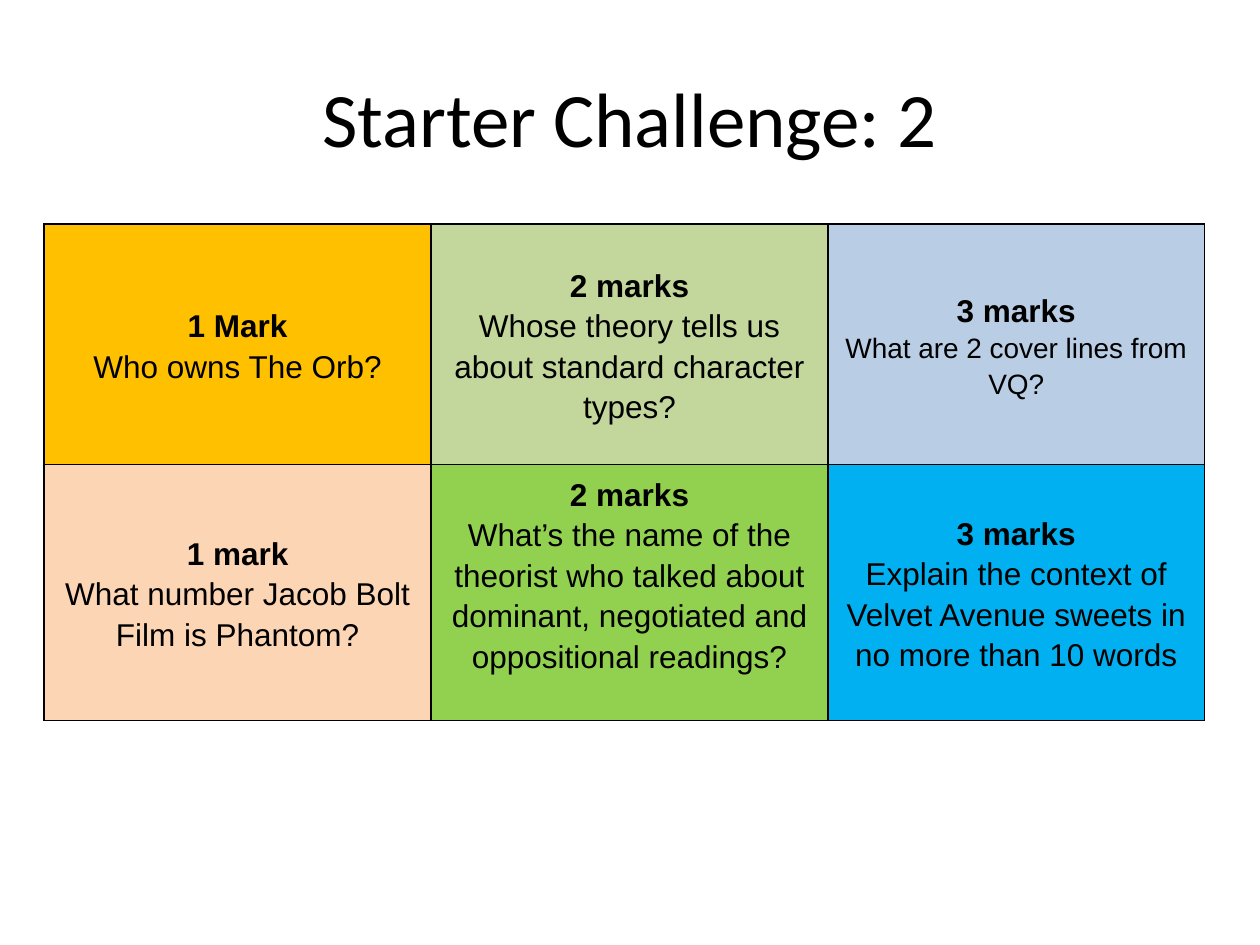
from lxml import etree
from pptx import Presentation
from pptx import util as u
from pptx.dml.color import RGBColor
from pptx.enum import text
from pptx.oxml import ns

BLACK = RGBColor(0x00, 0x00, 0x00)
AMBER = RGBColor(0xFF, 0xC0, 0x00)
SAGE = RGBColor(0xC3, 0xD6, 0x9B)
MIST = RGBColor(0xB9, 0xCD, 0xE5)
PEACH = RGBColor(0xFC, 0xD5, 0xB5)
GREEN = RGBColor(0x92, 0xD0, 0x50)
BLUE = RGBColor(0x00, 0xB0, 0xF0)

WIDTHS = [7.8, 8, 7.59]
HEIGHTS = [4.84, 5.16]
TASKS = [
    [
        ("1 Mark", "Who owns The Orb?", AMBER, {}),
        ("2 marks", "Whose theory tells us about standard character types?", SAGE, {}),
        ("3 marks", "What are 2 cover lines from VQ?", MIST, {"size": 16}),
    ],
    [
        ("1 mark", "What number Jacob Bolt Film is Phantom?", PEACH, {}),
        ("2 marks", "What’s the name of the theorist who talked about dominant, "
         "negotiated and oppositional readings?", GREEN, {"foot": 0.75}),
        ("3 marks", "Explain the context of Velvet Avenue sweets in no more than 10 words",
         BLUE, {}),
    ],
]


def assign(item, values):
    """Set each named attribute on an item."""
    for name, value in values.items():
        setattr(item, name, value)


def write(para, words, size, face, bold=False, space=1.0):
    """Fill a paragraph with one centred run."""
    assign(para, {"alignment": text.PP_ALIGN.CENTER, "line_spacing": space})
    run = para.add_run()
    run.text = words
    assign(run.font, {"name": face, "size": u.Pt(size), "bold": bold})
    run.font.color.rgb = BLACK


def border(cell):
    """Draw a thin black line on all four sides of a cell."""
    props = cell._tc.get_or_add_tcPr()
    for side in ("lnL", "lnR", "lnT", "lnB"):
        line = etree.SubElement(props, ns.qn(f"a:{side}"), w=str(u.Pt(1)))
        fill = etree.SubElement(line, ns.qn("a:solidFill"))
        etree.SubElement(fill, ns.qn("a:srgbClr"), val=str(BLACK))


def title(slide, left, top, width, height):
    """Place the heading in its box."""
    box = slide.shapes.add_textbox(u.Cm(left), u.Cm(top), u.Cm(width), u.Cm(height))
    frame = box.text_frame
    assign(frame, {"word_wrap": True, "vertical_anchor": text.MSO_ANCHOR.MIDDLE})
    write(frame.paragraphs[0], "Starter Challenge: 2", 44, "Calibri")


def task(cell, marks, words, colour, size=18, foot=0):
    """Fill one cell with its marks and question."""
    assign(cell, {
        "vertical_anchor": text.MSO_ANCHOR.MIDDLE,
        "margin_left": u.Cm(0.18), "margin_right": u.Cm(0.18),
        "margin_top": 0, "margin_bottom": u.Cm(foot),
    })
    border(cell)
    cell.fill.solid()
    cell.fill.fore_color.rgb = colour
    frame = cell.text_frame
    write(frame.paragraphs[0], marks, 18, "Arial", True, 1.15)
    write(frame.add_paragraph(), words, size, "Arial", False, 1.15)


def board(slide, left, top):
    """Place the grid of questions."""
    grid = slide.shapes.add_table(
        len(HEIGHTS), len(WIDTHS), u.Cm(left), u.Cm(top),
        u.Cm(sum(WIDTHS)), u.Cm(sum(HEIGHTS))).table
    assign(grid, {"first_row": False, "horz_banding": False})
    for col, width in zip(grid.columns, WIDTHS):
        col.width = u.Cm(width)
    for row, height, tasks in zip(grid.rows, HEIGHTS, TASKS):
        row.height = u.Cm(height)
        for cell, (marks, words, colour, extra) in zip(row.cells, tasks):
            task(cell, marks, words, colour, **extra)


def main():
    """Build and save the slide."""
    deck = Presentation()
    assign(deck, {"slide_width": u.Cm(25.4), "slide_height": u.Cm(19.05)})
    slide = deck.slides.add_slide(deck.slide_layouts[6])
    title(slide, 1.27, 0.76, 22.86, 3.18)
    board(slide, 0.89, 4.52)
    deck.save("out.pptx")


if __name__ == "__main__":
    main()
